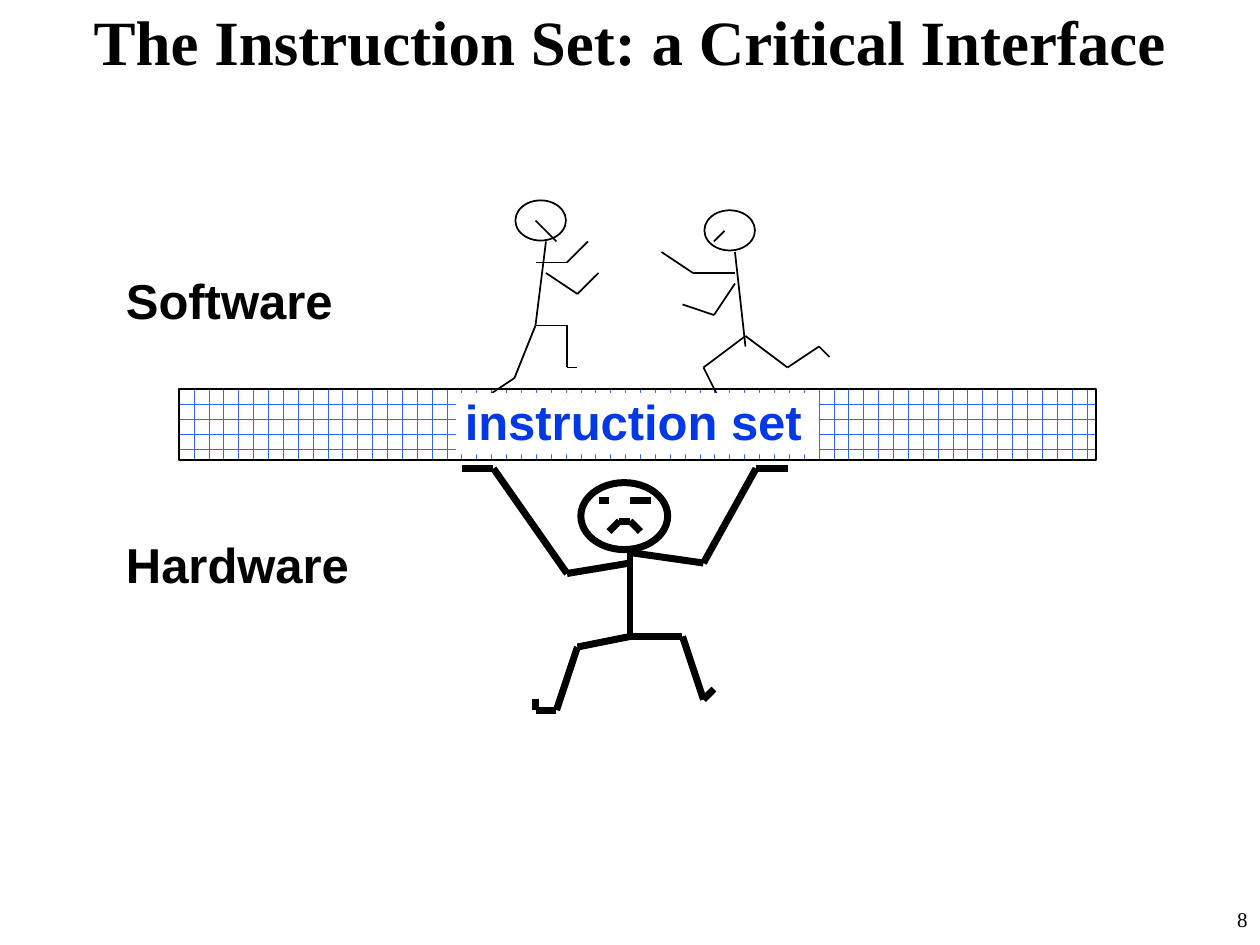
import pptx
import pptx.dml.color
import pptx.enum.dml
import pptx.enum.shapes
import pptx.enum.text
import pptx.oxml.ns
import pptx.util
import lxml.etree

Cm = pptx.util.Cm
Pt = pptx.util.Pt
RGBColor = pptx.dml.color.RGBColor
MSO_SHAPE = pptx.enum.shapes.MSO_SHAPE
PP_ALIGN = pptx.enum.text.PP_ALIGN

BLACK = RGBColor(0, 0, 0)
WHITE = RGBColor(255, 255, 255)
GRID_BLUE = RGBColor(0x33, 0x66, 0xFF)
LABEL_BLUE = RGBColor(0x00, 0x39, 0xE5)

GRID = 2.54 / 12
HARDWARE_SHIFT = -0.08

LEFT_FIGHTER = [
    [(52, 23), (51, 31), (54, 31), (54, 35), (55, 35)],
    [(51, 31), (49, 36), (46, 38)],
    [(52, 26), (55, 28), (57, 26)],
    [(51, 25), (54, 25), (56, 23)],
    [(53, 23), (51, 21)],
]
RIGHT_FIGHTER = [
    [(70, 24), (71, 33)],
    [(71, 32), (67, 35), (69, 39)],
    [(71, 32), (75, 35), (78, 33), (79, 34)],
    [(70, 27), (68, 30), (65, 29)],
    [(70, 26), (66, 26), (63, 24)],
    [(68, 23), (69, 22)],
]
HARDWARE_CARRIER = [
    [(58, 51), (59, 50), (60, 50), (61, 51)],
    [(60, 48), (62, 48)],
    [(58, 48), (57, 48)],
    [(60, 53), (60, 61), (65, 61), (67, 67), (68, 66)],
    [(60, 61), (55, 62), (53, 68), (51, 68), (51, 67)],
    [(60, 53), (67, 54), (72, 45), (75, 45)],
    [(60, 54), (54, 55), (47, 45), (44, 45)],
]


class SlideBuilder:
    heading_font = "Times New Roman"
    label_font = "Arial"
    label_size = 28

    def __init__(self, slide):
        self.slide = slide

    def shape(self, kind, box, line_width=None):
        shape = self.slide.shapes.add_shape(kind, *[Cm(value) for value in box])
        shape.shadow.inherit = False
        shape.fill.background()
        if line_width is None:
            shape.line.fill.background()
        else:
            shape.line.color.rgb = BLACK
            shape.line.width = Pt(line_width)
        return shape

    def band(self, box):
        fill = self.shape(MSO_SHAPE.RECTANGLE, box, 1).fill
        fill.patterned()
        fill.pattern = pptx.enum.dml.MSO_PATTERN.HORIZONTAL_BRICK
        fill.fore_color.rgb = GRID_BLUE
        fill.back_color.rgb = WHITE

    def segment(self, start, end, width, shift):
        points = [Cm(value) for x, y in (start, end)
                  for value in (x * GRID, y * GRID + shift)]
        connector = self.slide.shapes.add_connector(
            pptx.enum.shapes.MSO_CONNECTOR.STRAIGHT, *points)
        connector.line.color.rgb = BLACK
        connector.line.width = Pt(width)
        lxml.etree.SubElement(connector._element.spPr,
                              pptx.oxml.ns.qn("a:effectLst"))

    def figure(self, head, limbs, width, shift=0):
        self.shape(MSO_SHAPE.OVAL, head, width)
        for limb in limbs:
            for start, end in zip(limb, limb[1:]):
                self.segment(start, end, width, shift)

    def add_words(self, shape, text, font, size, color=BLACK, bold=True,
                  align=PP_ALIGN.LEFT, spacing=1.0, wrap=True,
                  insets=(0.18, 0.08)):
        frame = shape.text_frame
        frame.word_wrap = wrap
        frame.vertical_anchor = pptx.enum.text.MSO_ANCHOR.TOP
        frame.margin_left = frame.margin_right = Cm(insets[0])
        frame.margin_top = frame.margin_bottom = Cm(insets[1])
        paragraph = frame.paragraphs[0]
        paragraph.alignment = align
        paragraph.line_spacing = spacing
        run = paragraph.add_run()
        run.text = text
        run.font.name = font
        run.font.size = Pt(size)
        run.font.bold = bold
        run.font.color.rgb = color

    def text(self, box, text, font, size, **style):
        shape = self.slide.shapes.add_textbox(*[Cm(value) for value in box])
        self.add_words(shape, text, font, size, **style)

    def title(self, text):
        self.text((0, -0.03, 25.4, 1.68), text, self.heading_font, 36,
                  align=PP_ALIGN.CENTER)

    def band_label(self, box, text):
        shape = self.shape(MSO_SHAPE.RECTANGLE, box)
        shape.fill.solid()
        shape.fill.fore_color.rgb = WHITE
        self.add_words(shape, text, self.label_font, self.label_size,
                       color=LABEL_BLUE, spacing=0.92)

    def side_label(self, top, width, text):
        self.text((2.36, top, width, 1.17), text, self.label_font,
                  self.label_size, spacing=0.85, wrap=False)

    def page_number(self, text):
        self.text((20.12, 18.14, 5.28, 0.91), text, self.heading_font, 12,
                  bold=False, align=PP_ALIGN.RIGHT, insets=(0.25, 0.13))


def main():
    presentation = pptx.Presentation()
    presentation.slide_width = Cm(25.4)
    presentation.slide_height = Cm(19.05)
    slide = presentation.slides.add_slide(presentation.slide_layouts[6])
    builder = SlideBuilder(slide)

    builder.title("The Instruction Set: a Critical Interface")
    builder.band((3.61, 7.85, 18.49, 1.42))
    builder.figure((10.39, 4.04, 1.02, 0.81), LEFT_FIGHTER, 1)
    builder.figure((14.2, 4.24, 1.02, 0.81), RIGHT_FIGHTER, 1)
    builder.figure((11.71, 9.73, 1.75, 1.35), HARDWARE_CARRIER, 4, HARDWARE_SHIFT)
    builder.band_label((9.19, 7.92, 7.32, 1.24), "instruction set")
    builder.side_label(5.56, 4.57, "Software")
    builder.side_label(10.87, 4.9, "Hardware")
    builder.page_number("8")

    presentation.save("out.pptx")


if __name__ == "__main__":
    main()
